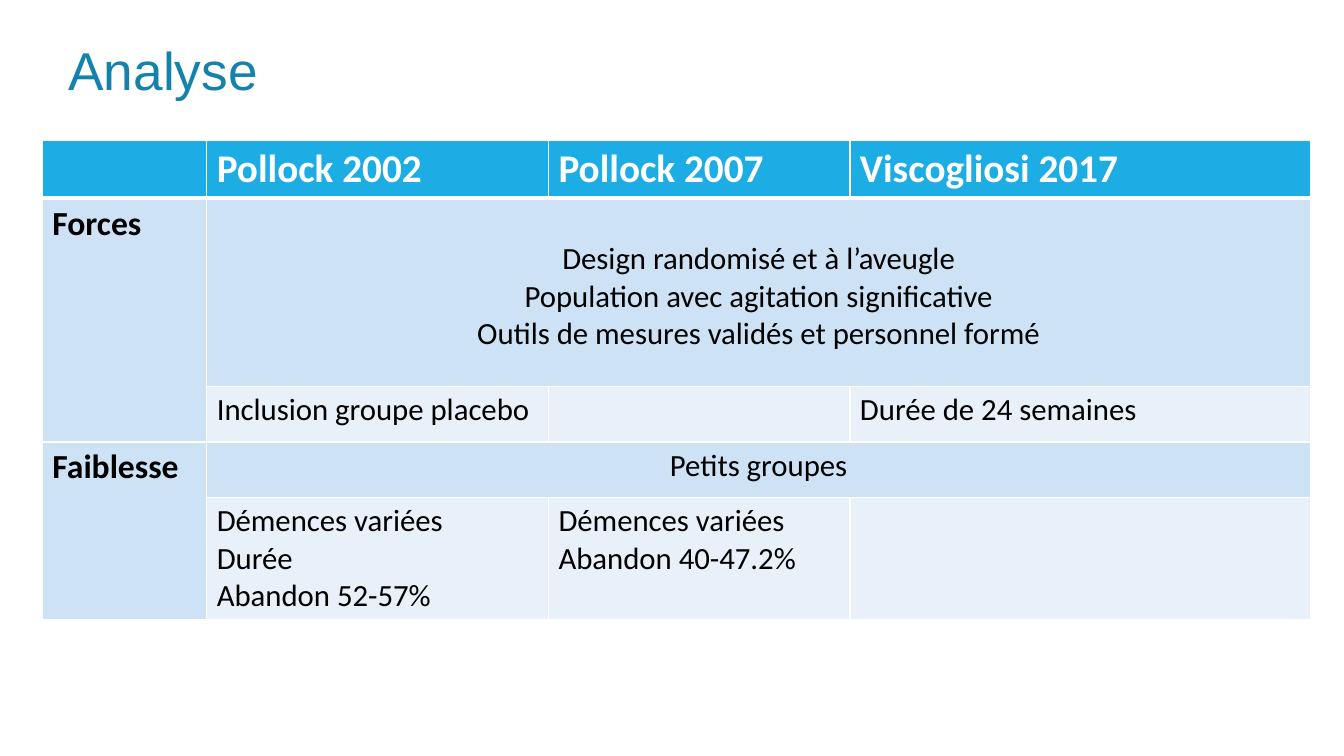
from lxml import etree
from pptx import Presentation
from pptx.dml.color import RGBColor
from pptx.enum.text import MSO_ANCHOR, PP_ALIGN
from pptx.oxml.ns import qn
from pptx.util import Inches, Pt

CENTER, LEFT = PP_ALIGN.CENTER, PP_ALIGN.LEFT
MIDDLE = MSO_ANCHOR.MIDDLE

COLORS = {
    "title": "1482AC",
    "header": "1CADE4",
    "strong": "CDE3F5",
    "light": "E8F1FA",
    "white": "FFFFFF",
    "black": "000000",
}
TITLE = "Analyse"
ROWS = [
    ["", "Pollock 2002", "Pollock 2007", "Viscogliosi 2017"],
    ["Forces", "Design randomisé et à l’aveugle\nPopulation avec agitation significative\n"
     "Outils de mesures validés et personnel formé", "", ""],
    ["", "Inclusion groupe placebo", "", "Durée de 24 semaines"],
    ["Faiblesse", "Petits groupes", "", ""],
    ["", "Démences variées\nDurée\nAbandon 52-57%", "Démences variées\nAbandon 40-47.2%", ""],
]
COLUMN_WIDTHS = [1.63, 3.39, 2.99, 4.57]
ROW_HEIGHTS = [0.57, 1.87, 0.55, 0.55, 1.21]
SHARED_ROWS = (1, 3)
STYLES = {
    "header": ("header", "white", 28, True, LEFT),
    "label": ("strong", "black", 24, True, LEFT),
    "shared": ("strong", "black", 22, False, CENTER),
    "detail": ("light", "black", 22, False, LEFT),
}


def rgb(name):
    return RGBColor.from_string(COLORS[name])


def role_of(row, column):
    if row == 0:
        return "header"
    if column == 0:
        return "label"
    return "shared" if row in SHARED_ROWS else "detail"


def draw_borders(cell, row):
    widths = {"L": 1, "R": 1, "T": 3 if row == 1 else 1, "B": 3 if row == 0 else 1}
    for side, width in widths.items():
        line = etree.SubElement(cell._tc.get_or_add_tcPr(), qn(f"a:ln{side}"), w=str(Pt(width)))
        fill = etree.SubElement(line, qn("a:solidFill"))
        etree.SubElement(fill, qn("a:srgbClr"), val=COLORS["white"])


def fill_cell(cell, row, column, text):
    fill, color, size, bold, align = STYLES[role_of(row, column)]
    draw_borders(cell, row)
    cell.fill.solid()
    cell.fill.fore_color.rgb = rgb(fill)
    cell.text = text
    for paragraph in cell.text_frame.paragraphs:
        paragraph.alignment = align
        font = paragraph.font
        font.name, font.size, font.bold = "Calibri", Pt(size), bold
        font.color.rgb = rgb(color)


def add_title(slide):
    box = slide.shapes.add_textbox(Inches(0.58), 0, Inches(11.5), Inches(1.45))
    frame = box.text_frame
    frame.word_wrap = True
    frame.vertical_anchor = MIDDLE
    heading = frame.paragraphs[0]
    heading.text = TITLE
    heading.line_spacing = 0.9
    heading.font.name, heading.font.size = "Arial", Pt(38)
    heading.font.color.rgb = rgb("title")


def add_comparison(slide):
    comparison = slide.shapes.add_table(
        len(ROWS), len(COLUMN_WIDTHS), Inches(0.42), Inches(1.39),
        Inches(sum(COLUMN_WIDTHS)), Inches(sum(ROW_HEIGHTS))).table
    for column, width in zip(comparison.columns, COLUMN_WIDTHS):
        column.width = Inches(width)
    for row, height in zip(comparison.rows, ROW_HEIGHTS):
        row.height = Inches(height)
    for r, texts in enumerate(ROWS):
        for c, text in enumerate(texts):
            fill_cell(comparison.cell(r, c), r, c, text)
    for r in SHARED_ROWS:
        comparison.cell(r, 0).merge(comparison.cell(r + 1, 0))
        comparison.cell(r, 1).merge(comparison.cell(r, 3))
    comparison.cell(1, 1).margin_top = Inches(0.42)


def main():
    deck = Presentation()
    deck.slide_width, deck.slide_height = Inches(13.33), Inches(7.5)
    slide = deck.slides.add_slide(deck.slide_layouts[6])
    add_comparison(slide)
    add_title(slide)
    deck.save("out.pptx")


if __name__ == "__main__":
    main()
